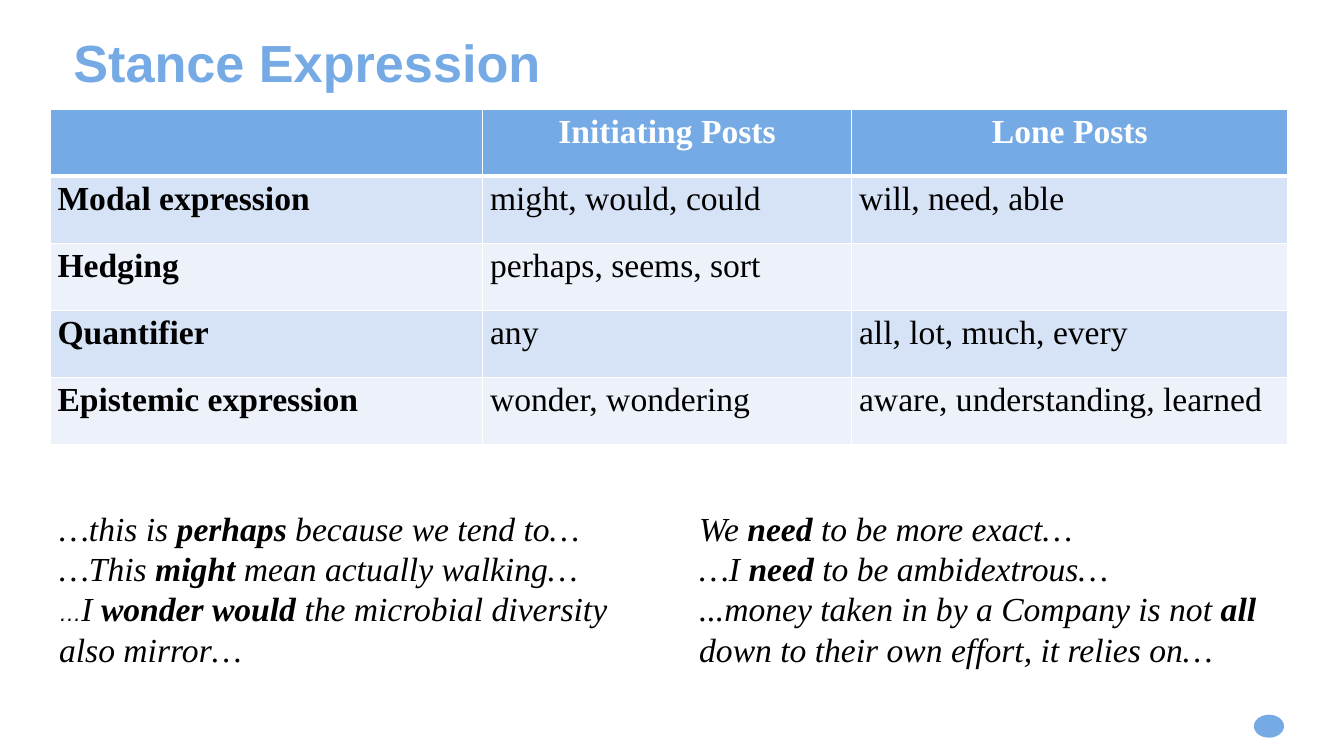
from lxml.etree import SubElement
from pptx import Presentation
from pptx.dml.color import RGBColor
from pptx.enum.shapes import MSO_SHAPE
from pptx.enum.text import MSO_ANCHOR, PP_ALIGN
from pptx.oxml.ns import qn
from pptx.util import Cm, Pt

BLUE = RGBColor(0x75, 0xAA, 0xE5)
BAND_DARK = RGBColor(0xD6, 0xE2, 0xF5)
BAND_LIGHT = RGBColor(0xEC, 0xF1, 0xFA)
WHITE = RGBColor(0xFF, 0xFF, 0xFF)
BLACK = RGBColor(0, 0, 0)
SERIF = "Times New Roman"
SANS = "Arial"

TITLE = "Stance Expression"
ROWS = [
    ("", "Initiating Posts", "Lone Posts"),
    ("Modal expression", "might, would, could", "will, need, able"),
    ("Hedging", "perhaps, seems, sort", ""),
    ("Quantifier", "any", "all, lot, much, every"),
    ("Epistemic expression", "wonder, wondering", "aware, understanding, learned"),
]
COLUMN_WIDTHS = [10.9, 9.3, 11]
ROW_HEIGHT = 1.69
QUOTES = [
    (1.24, 14.58, [
        [("…this is ", ""), ("perhaps", "bold"), (" because we tend to…", "")],
        [("…This ", ""), ("might", "bold"), (" mean actually walking…", "")],
        [("…", "small"), ("I ", ""), ("wonder would", "bold"),
         (" the microbial diversity also mirror…", "")],
    ]),
    (17.37, 15.27, [
        [("We ", ""), ("need", "bold"), (" to be more exact…", "")],
        [("…I ", ""), ("need", "bold"), (" to be ambidextrous…", "")],
        [("...money taken in by a Company is not ", ""), ("all", "bold"),
         (" down to their own effort, it relies on…", "")],
    ]),
]


def style_font(font, name, size, color, bold=False, italic=False):
    font.name = name
    font.size = Pt(size)
    font.color.rgb = color
    font.bold = bold
    font.italic = italic


def add_borders(cell, bottom_width):
    properties = cell._tc.get_or_add_tcPr()
    for position, side in enumerate(("lnL", "lnR", "lnT", "lnB")):
        width = bottom_width if side == "lnB" else 1
        line = SubElement(properties, qn(f"a:{side}"), w=str(Pt(width)))
        fill = SubElement(line, qn("a:solidFill"))
        SubElement(fill, qn("a:srgbClr"), val=str(WHITE))
        properties.insert(position, line)


def add_title(slide):
    box = slide.shapes.add_textbox(Cm(1.85), Cm(0.81), Cm(26.7), Cm(1.4))
    frame = box.text_frame
    frame.word_wrap = True
    frame.margin_left = frame.margin_right = frame.margin_top = frame.margin_bottom = 0
    frame.text = TITLE
    paragraph = frame.paragraphs[0]
    paragraph.line_spacing = Pt(43.5)
    style_font(paragraph.runs[0].font, SANS, 37.3, BLUE, bold=True)


def add_stance_table(slide):
    table = slide.shapes.add_table(
        len(ROWS), len(COLUMN_WIDTHS), Cm(1.26), Cm(2.75),
        Cm(sum(COLUMN_WIDTHS)), Cm(ROW_HEIGHT * len(ROWS))).table
    for column, width in zip(table.columns, COLUMN_WIDTHS):
        column.width = Cm(width)
    for row_index, texts in enumerate(ROWS):
        table.rows[row_index].height = Cm(ROW_HEIGHT)
        header = row_index == 0
        band = BLUE if header else BAND_DARK if row_index % 2 else BAND_LIGHT
        for column_index, text in enumerate(texts):
            cell = table.cell(row_index, column_index)
            cell.fill.solid()
            cell.fill.fore_color.rgb = band
            add_borders(cell, 3 if header else 1)
            cell.vertical_anchor = MSO_ANCHOR.MIDDLE
            cell.margin_left = cell.margin_right = Cm(0.19)
            cell.margin_top = cell.margin_bottom = 0
            if not text:
                continue
            cell.text_frame.text = text
            paragraph = cell.text_frame.paragraphs[0]
            paragraph.alignment = PP_ALIGN.CENTER if header else PP_ALIGN.LEFT
            paragraph.line_spacing = Pt(11)
            style_font(paragraph.runs[0].font, SERIF, 24,
                       WHITE if header else BLACK,
                       bold=header or column_index == 0)


def add_quotes(slide, left, width, quotes):
    frame = slide.shapes.add_textbox(Cm(left), Cm(12.67), Cm(width), Cm(4.37)).text_frame
    frame.word_wrap = True
    for index, pieces in enumerate(quotes):
        paragraph = frame.add_paragraph() if index else frame.paragraphs[0]
        for text, style in pieces:
            run = paragraph.add_run()
            run.text = text
            name, size = (SANS, 16) if style == "small" else (SERIF, 24)
            style_font(run.font, name, size, BLACK, bold=style == "bold", italic=True)


def add_page_dot(slide):
    dot = slide.shapes.add_shape(MSO_SHAPE.OVAL, Cm(31.6), Cm(18.01), Cm(0.76), Cm(0.58))
    dot.shadow.inherit = False
    dot.fill.solid()
    dot.fill.fore_color.rgb = BLUE
    dot.line.fill.background()


def main():
    presentation = Presentation()
    presentation.slide_width = Cm(33.87)
    presentation.slide_height = Cm(19.05)
    slide = presentation.slides.add_slide(presentation.slide_layouts[6])
    add_page_dot(slide)
    add_title(slide)
    add_stance_table(slide)
    for left, width, quotes in QUOTES:
        add_quotes(slide, left, width, quotes)
    presentation.save("out.pptx")


if __name__ == "__main__":
    main()
